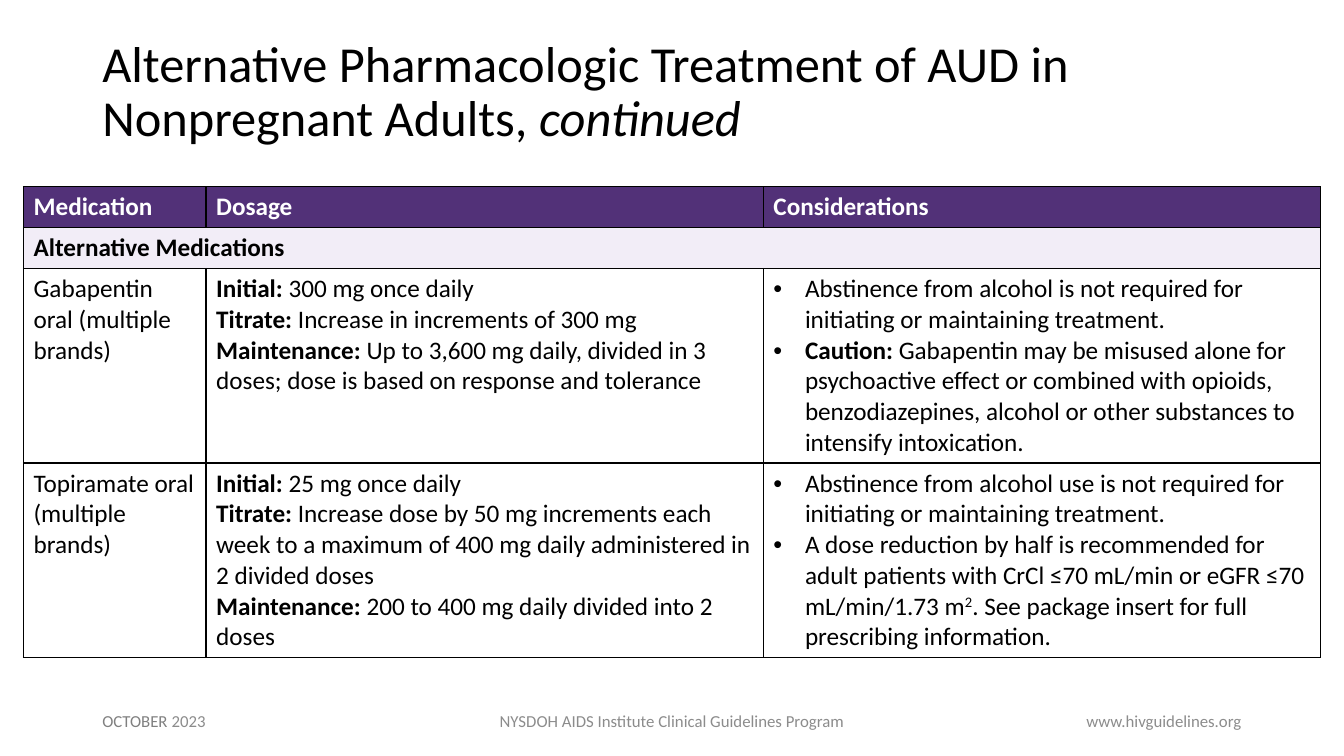
from lxml import etree
from pptx import Presentation
from pptx.dml.color import RGBColor
from pptx.enum.text import MSO_ANCHOR, PP_ALIGN
from pptx.oxml.ns import qn
from pptx.util import Pt

LEFT, CENTER, RIGHT = PP_ALIGN.LEFT, PP_ALIGN.CENTER, PP_ALIGN.RIGHT
MIDDLE = MSO_ANCHOR.MIDDLE
FONT = "Calibri"
BLACK, WHITE, PURPLE, LILAC = "000000", "FFFFFF", "523178", "F2EDF7"
GREY, DARK_GREY = "8C8C8C", "808080"
COLUMN_WIDTHS = [130.4, 398.1, 398.1]
ROW_HEIGHTS = [29.2, 29.2, 139, 139]
BULLET_INDENT = 22.5

HEADINGS = ["Medication", "Dosage", "Considerations"]
MEDICATIONS = [
    (
        [[("Gabapentin oral (multiple brands)", "")]],
        [
            [("Initial: ", "bold"), ("300 mg once daily", "")],
            [("Titrate: ", "bold"), ("Increase in increments of 300 mg", "")],
            [("Maintenance: ", "bold"),
             ("Up to 3,600 mg daily, divided in 3 doses; dose is based on response and tolerance", "")],
        ],
        [
            [("Abstinence from alcohol is not required for initiating or maintaining treatment.", "")],
            [("Caution: ", "bold"),
             ("Gabapentin may be misused alone for psychoactive effect or combined with opioids, "
              "benzodiazepines, alcohol or other substances to intensify intoxication.", "")],
        ],
    ),
    (
        [[("Topiramate oral (multiple brands)", "")]],
        [
            [("Initial: ", "bold"), ("25 mg once daily", "")],
            [("Titrate:", "bold"),
             (" Increase dose by 50 mg increments each week to a maximum of 400 mg daily "
              "administered in 2 divided doses", "")],
            [("Maintenance: ", "bold"), ("200 to 400 mg daily divided into 2 doses", "")],
        ],
        [
            [("Abstinence from alcohol use is not required for initiating or maintaining treatment.", "")],
            [("A dose reduction by half is recommended for adult patients with CrCl ≤70 mL/min "
              "or eGFR ≤70 mL/min/1.73 m", ""),
             ("2", "superscript"),
             (". See package insert for full prescribing information.", "")],
        ],
    ),
]


def color(value):
    return RGBColor.from_string(value)


def add_run(para, text, size, ink, style=""):
    span = para.add_run()
    span.text = text
    span.font.name = FONT
    span.font.size = Pt(size)
    span.font.color.rgb = color(ink)
    span.font.bold = style == "bold"
    span.font.italic = style == "italic"
    if style == "superscript":
        span.font._element.set("baseline", "30000")


def add_text(page, left, top, width, height, spans, size, align=LEFT, line_spacing=1.0):
    box = page.shapes.add_textbox(Pt(left), Pt(top), Pt(width), Pt(height))
    frame = box.text_frame
    frame.word_wrap = True
    frame.vertical_anchor = MIDDLE
    para = frame.paragraphs[0]
    para.alignment = align
    para.line_spacing = line_spacing
    for text, ink, style in spans:
        add_run(para, text, size, ink, style)


def add_bullet(para):
    properties = para._p.get_or_add_pPr()
    properties.set("marL", str(Pt(BULLET_INDENT)))
    properties.set("indent", str(-Pt(BULLET_INDENT)))
    etree.SubElement(properties, qn("a:buFont")).set("typeface", "Arial")
    etree.SubElement(properties, qn("a:buChar")).set("char", "•")


def add_borders(cell):
    properties = cell._tc.get_or_add_tcPr()
    for position, side in enumerate(["lnL", "lnR", "lnT", "lnB"]):
        line = etree.Element(qn(f"a:{side}"), w=str(Pt(1)))
        fill = etree.SubElement(line, qn("a:solidFill"))
        etree.SubElement(fill, qn("a:srgbClr")).set("val", BLACK)
        properties.insert(position, line)


def style_cell(cell, fill=None):
    if fill:
        cell.fill.solid()
        cell.fill.fore_color.rgb = color(fill)
    else:
        cell.fill.background()
    add_borders(cell)


def write_cell(cell, paragraphs, ink=BLACK, bulleted=False):
    frame = cell.text_frame
    for index, spans in enumerate(paragraphs):
        para = frame.add_paragraph() if index else frame.paragraphs[0]
        if bulleted:
            add_bullet(para)
        for text, style in spans:
            add_run(para, text, 18, ink, style)


def add_medication_table(page):
    frame = page.shapes.add_table(
        len(ROW_HEIGHTS), len(COLUMN_WIDTHS), Pt(16.8), Pt(133.4),
        Pt(sum(COLUMN_WIDTHS)), Pt(sum(ROW_HEIGHTS)))
    table = frame.table
    table.first_row = False
    table.horz_banding = False
    for column, width in zip(table.columns, COLUMN_WIDTHS):
        column.width = Pt(width)
    for row, height, fill in zip(table.rows, ROW_HEIGHTS, [PURPLE, LILAC, None, None]):
        row.height = Pt(height)
        for cell in row.cells:
            style_cell(cell, fill)

    for index, heading in enumerate(HEADINGS):
        write_cell(table.cell(0, index), [[(heading, "bold")]], WHITE)
    table.cell(1, 0).merge(table.cell(1, len(HEADINGS) - 1))
    write_cell(table.cell(1, 0), [[("Alternative Medications", "bold")]])
    for row_index, medication in enumerate(MEDICATIONS, start=2):
        for index, paragraphs in enumerate(medication):
            write_cell(table.cell(row_index, index), paragraphs, bulleted=index == 2)


def add_footer(page, left, width, spans, align):
    add_text(page, left, 500.5, width, 28.75, spans, 12, align)


def main():
    deck = Presentation()
    deck.slide_width, deck.slide_height = Pt(960), Pt(540)
    page = deck.slides.add_slide(deck.slide_layouts[6])
    add_text(page, 66, 14.4, 828, 104.4, [
        ("Alternative Pharmacologic Treatment of AUD in Nonpregnant Adults, ", BLACK, ""),
        ("continued", BLACK, "italic"),
    ], 36, line_spacing=0.9)
    add_footer(page, 318, 324,
               [("NYSDOH AIDS Institute Clinical Guidelines Program", GREY, "")], CENTER)
    add_footer(page, 678, 216, [("www.hivguidelines.org", GREY, "")], RIGHT)
    add_footer(page, 66, 216, [("OCTOBER", DARK_GREY, ""), (" 2023", GREY, "")], LEFT)
    add_medication_table(page)
    deck.save("out.pptx")


if __name__ == "__main__":
    main()
